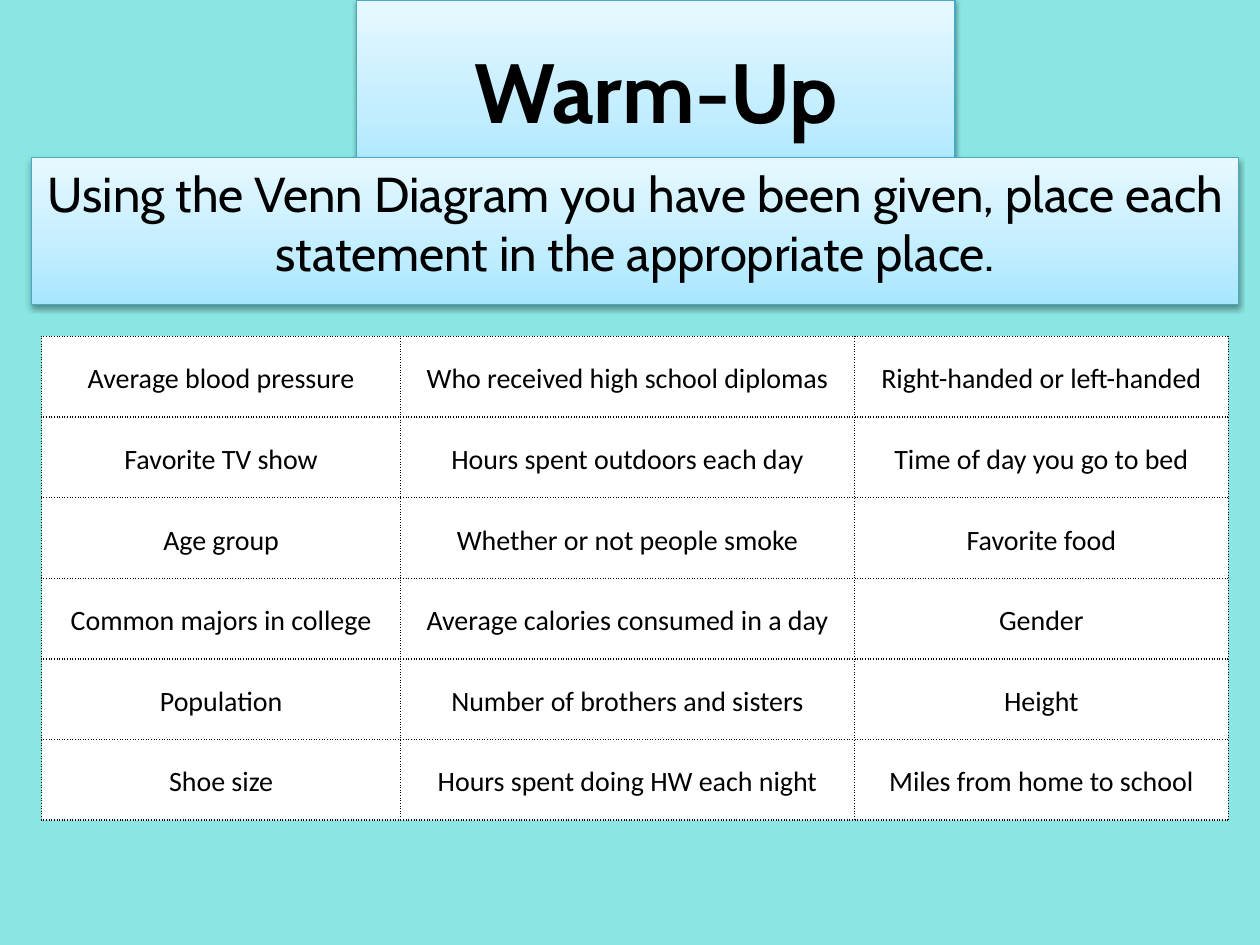
from lxml.etree import SubElement as Sub
from pptx import Presentation
from pptx.dml.color import RGBColor
from pptx.enum.shapes import MSO_SHAPE as SHAPE
from pptx.enum.text import MSO_ANCHOR as ANCHOR, PP_ALIGN as ALIGN
from pptx.oxml.ns import qn
from pptx.util import Inches, Pt

BLACK, WHITE = "000000", "FFFFFF"
BACKGROUND, PANEL_LINE = "8AE6E2", "46AAC5"
PANEL_STOPS = [(0, "A7E6FF"), (35, "C1EDFF"), (100, "E7F8FF")]
COLUMN_WIDTHS = [2.85, 3.6, 2.97]
ROW_HEIGHT = 0.64
STATEMENTS = [
    ["Average blood pressure", "Who received high school diplomas", "Right-handed or left-handed"],
    ["Favorite TV show", "Hours spent outdoors each day", "Time of day you go to bed"],
    ["Age group", "Whether or not people smoke", "Favorite food"],
    ["Common majors in college", "Average calories consumed in a day", "Gender"],
    ["Population", "Number of brothers and sisters", "Height"],
    ["Shoe size", "Hours spent doing HW each night", "Miles from home to school"],
]


def rgb(value):
    return RGBColor.from_string(value)


def node(parent, tag, **attrs):
    """Append a DrawingML element and return it."""
    return Sub(parent, qn(f"a:{tag}"), {k: str(v) for k, v in attrs.items()})


def write(tf, text, font, spacing):
    """Put one centred paragraph in a text frame."""
    p = tf.paragraphs[0]
    r = p.add_run()
    r.text = text
    for target, values in ((p, {"alignment": ALIGN.CENTER, **spacing}), (r.font, font)):
        for name, value in values.items():
            setattr(target, name, value)
    r.font.color.rgb = rgb(BLACK)


def fill_gradient(sp):
    sp.fill.gradient()
    sp.fill.gradient_angle = 90
    stops = sp._element.spPr.find(qn("a:gradFill")).find(qn("a:gsLst"))
    for stop in list(stops):
        stops.remove(stop)
    for position, color in PANEL_STOPS:
        node(node(stops, "gs", pos=position * 1000), "srgbClr", val=color)


def add_shadow(sp):
    sp.shadow.inherit = False
    effects = sp._element.spPr.find(qn("a:effectLst"))
    shadow = node(effects, "outerShdw", blurRad=Pt(3.1), dist=Pt(1.6),
                  dir=90 * 60000, rotWithShape=0)
    node(node(shadow, "srgbClr", val=BLACK), "alpha", val=38000)


def add_panel(s, box, text, anchor, font, **spacing):
    sp = s.shapes.add_shape(SHAPE.RECTANGLE, *map(Inches, box))
    fill_gradient(sp)
    sp.line.color.rgb = rgb(PANEL_LINE)
    sp.line.width = Pt(0.75)
    add_shadow(sp)
    tf = sp.text_frame
    tf.word_wrap = True
    tf.vertical_anchor = anchor
    write(tf, text, {"name": "Cabin", **font}, spacing)


def add_dotted_borders(cell):
    tc_pr = cell._tc.get_or_add_tcPr()
    for side in "LRTB":
        ln = node(tc_pr, f"ln{side}", w=Pt(1))
        node(node(ln, "solidFill"), "srgbClr", val=BLACK)
        node(ln, "prstDash", val="dot")


def format_cell(cell, text):
    add_dotted_borders(cell)
    cell.fill.solid()
    cell.fill.fore_color.rgb = rgb(WHITE)
    layout = {"vertical_anchor": ANCHOR.MIDDLE, "margin_top": 0, "margin_bottom": 0,
              "margin_left": Inches(0.05), "margin_right": Inches(0.05)}
    for name, value in layout.items():
        setattr(cell, name, value)
    write(cell.text_frame, text, {"name": "Calibri", "size": Pt(16)}, {"line_spacing": 1.15})


def add_statement_table(s, left, top):
    size = (sum(COLUMN_WIDTHS), ROW_HEIGHT * len(STATEMENTS))
    table = s.shapes.add_table(len(STATEMENTS), len(COLUMN_WIDTHS),
                               *map(Inches, (left, top, *size))).table
    table.first_row = table.horz_banding = False
    for column, width in zip(table.columns, COLUMN_WIDTHS):
        column.width = Inches(width)
    for row, texts in zip(table.rows, STATEMENTS):
        row.height = Inches(ROW_HEIGHT)
        for cell, text in zip(row.cells, texts):
            format_cell(cell, text)


def main():
    prs = Presentation()
    prs.slide_width, prs.slide_height = Inches(10), Inches(7.5)
    s = prs.slides.add_slide(prs.slide_layouts[6])
    s.background.fill.solid()
    s.background.fill.fore_color.rgb = rgb(BACKGROUND)
    add_panel(s, (2.83, 0, 4.75, 1.42), "Warm-Up", ANCHOR.MIDDLE,
              {"size": Pt(48), "bold": True})
    add_panel(s, (0.25, 1.25, 9.58, 1.17),
              "Using the Venn Diagram you have been given, "
              "place each statement in the appropriate place.",
              ANCHOR.TOP, {"size": Pt(28)}, space_before=Pt(5.6))
    add_statement_table(s, 0.33, 2.67)
    prs.save("out.pptx")


if __name__ == "__main__":
    main()
